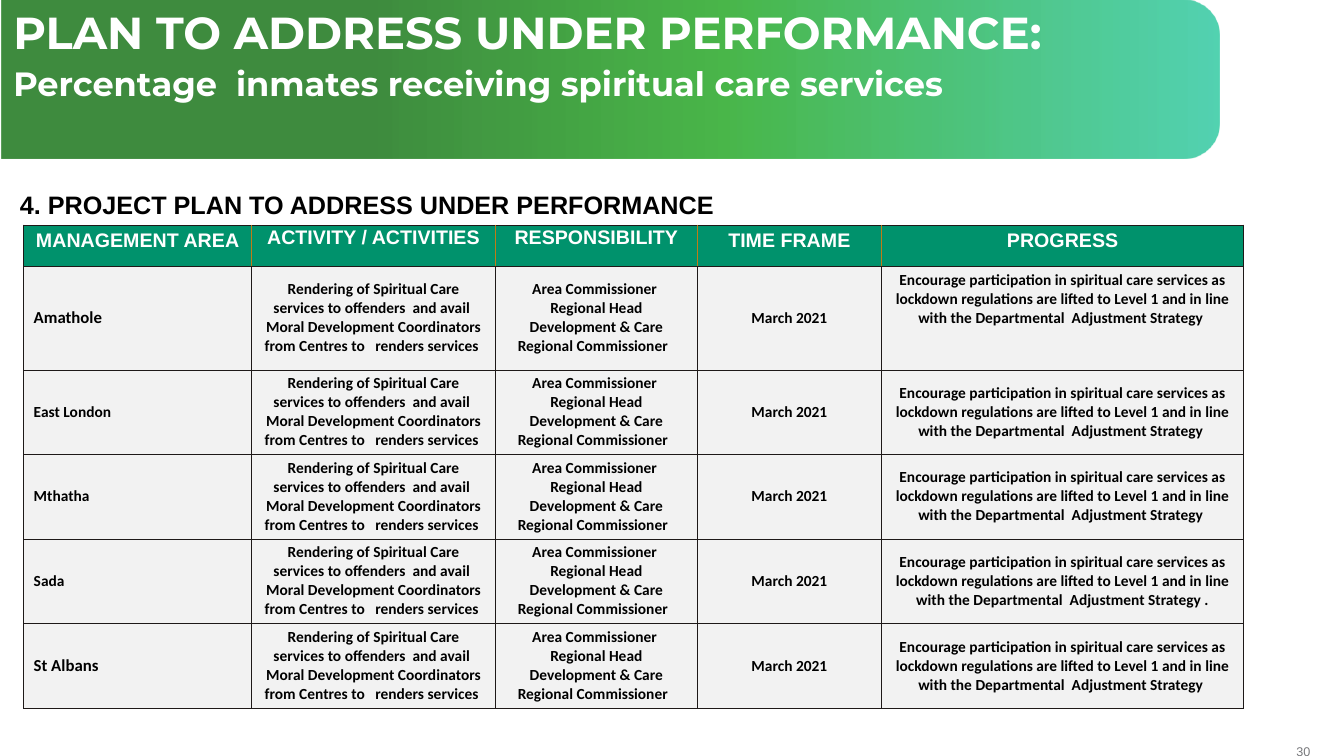
from lxml.etree import SubElement
from pptx import Presentation
from pptx.dml.color import RGBColor
from pptx.enum.shapes import MSO_SHAPE
from pptx.enum.text import MSO_ANCHOR, MSO_AUTO_SIZE, PP_ALIGN
from pptx.oxml import parse_xml
from pptx.oxml.ns import nsdecls, qn
from pptx.util import Cm, Pt

WHITE, BLACK, GREY = "FFFFFF", "000000", "77787B"
GREEN, PALE, RULE, GOLD = "00926C", "F2F2F2", "1E1918", "BF7B17"
LEFT, MID, RIGHT = PP_ALIGN.LEFT, PP_ALIGN.CENTER, PP_ALIGN.RIGHT


def color(code):
    return RGBColor.from_string(code)


class Deck:
    def __init__(self):
        self.file = Presentation()
        self.file.slide_width, self.file.slide_height = Cm(33.87), Cm(19.05)
        self.slide = self.file.slides.add_slide(self.file.slide_layouts[5])
        self.shapes = self.slide.shapes

    def fill_text(self, frame, lines, sizes, font, code, align=LEFT, bold=True):
        frame.word_wrap = True
        frame.text = "\n".join(lines)
        for para, size in zip(frame.paragraphs, sizes):
            para.alignment = align
            para.font.size, para.font.name = Pt(size), font
            para.font.bold, para.font.color.rgb = bold, color(code)

    def banner(self, left, top, width, height, stops):
        # Turned a quarter, so the rounded top edge faces right
        shape = self.shapes.add_shape(
            MSO_SHAPE.ROUND_2_SAME_RECTANGLE,
            Cm(left + (width - height) / 2), Cm(top + (height - width) / 2),
            Cm(height), Cm(width))
        shape.rotation = 90
        shape.adjustments[0], shape.adjustments[1] = 0.23, 0
        shape.shadow.inherit = False
        shape.line.fill.background()
        marks = "".join(
            f'<a:gs pos="{pos * 1000}"><a:srgbClr val="{code}">'
            f'<a:alpha val="{alpha * 1000}"/></a:srgbClr></a:gs>'
            for pos, code, alpha in stops)
        shape.fill.background()
        blank = shape._element.spPr.find(qn("a:noFill"))
        blank.getparent().replace(blank, parse_xml(
            f'<a:gradFill {nsdecls("a")} rotWithShape="1"><a:gsLst>{marks}'
            '</a:gsLst><a:lin ang="16200000" scaled="0"/></a:gradFill>'))

    def title(self, box, lines, sizes):
        title = self.shapes.title
        title.left, title.top, title.width, title.height = map(Cm, box)
        frame = title.text_frame
        self.fill_text(frame, lines, sizes, "Montserrat", WHITE)
        frame.auto_size = MSO_AUTO_SIZE.NONE
        frame.vertical_anchor = MSO_ANCHOR.TOP
        for para in frame.paragraphs:
            para.line_spacing, para.space_after = 0.9, Pt(6)
            para.space_before = Pt(0)
        self.shapes._spTree.append(title._element)  # in front of the banner

    def label(self, box, text, size, code, align=LEFT, bold=True, inset=None):
        frame = self.shapes.add_textbox(*map(Cm, box)).text_frame
        self.fill_text(frame, [text], [size], "Arial", code, align, bold)
        if inset is not None:
            frame.margin_left = frame.margin_right = Cm(inset)
            frame.margin_top = frame.margin_bottom = Cm(inset)

    def table(self, left, top, widths, heights):
        grid = self.shapes.add_table(
            len(heights), len(widths), Cm(left), Cm(top),
            Cm(sum(widths)), Cm(sum(heights))).table
        grid.first_row = grid.horz_banding = False
        for col, width in zip(grid.columns, widths):
            col.width = Cm(width)
        for row, height in zip(grid.rows, heights):
            row.height = Cm(height)
        return grid

    def cell(self, cell, lines, size, font, code, back, align, sides, pad):
        self.fill_text(cell.text_frame, lines, [size] * len(lines), font, code, align)
        cell.margin_left, cell.margin_top, cell.margin_right, cell.margin_bottom = map(Cm, pad)
        props = cell._tc.get_or_add_tcPr()
        for side, edge in zip("LRTB", sides):
            line = SubElement(props, qn(f"a:ln{side}"), w=str(Pt(0.5)))
            SubElement(SubElement(line, qn("a:solidFill")), qn("a:srgbClr"), val=edge)
        cell.fill.solid()
        cell.fill.fore_color.rgb = color(back)


def main():
    deck = Deck()

    # Banner and title
    deck.banner(0.04, 0, 30.68, 3.99,
                [(30, "006600", 75), (59, "009900", 71), (100, "00BC8D", 67)])
    deck.title((0.08, 0.15, 30.43, 1.45),
               ["PLAN TO ADDRESS UNDER PERFORMANCE:",
                "Percentage  inmates receiving spiritual care services"], [32, 24])

    # Heading and page number
    deck.label((0.25, 4.65, 24.5, 1.02),
               "4. PROJECT PLAN TO ADDRESS UNDER PERFORMANCE", 18, BLACK)
    deck.label((32.03, 18.74, 0.99, 0.38), "30", 9, GREY, RIGHT, False, 0)

    # Table content
    heads = ["MANAGEMENT AREA", "ACTIVITY / ACTIVITIES", "RESPONSIBILITY",
             "TIME FRAME", "PROGRESS"]
    areas = ["Amathole", "East London", "Mthatha", "Sada", "St Albans"]
    task = ("Rendering of Spiritual Care services to offenders  and avail  Moral "
            "Development Coordinators from Centres to   renders services ")
    staff = ["Area Commissioner ", "Regional Head Development & Care",
             "Regional Commissioner  "]
    state = ("Encourage participation in spiritual care services as lockdown "
             "regulations are lifted to Level 1 and in line with the "
             "Departmental  Adjustment Strategy ")

    grid = deck.table(0.6, 5.67, [5.74, 6.15, 5.08, 4.65, 9.12],
                      [1.04, 2.61] + [2.13] * 4)

    # Header row
    wide, tight = (0.25, 0.13, 0.25, 0.13), (0.03, 0.03, 0.03, 0)
    for col, head in enumerate(heads):
        sides = [GOLD if col else RULE, GOLD if col < 4 else RULE, RULE, RULE]
        deck.cell(grid.cell(0, col), [head], 14, "Arial", WHITE, GREEN, MID,
                  sides, tight if col in (1, 2) else wide)

    # Body rows
    for row, area in enumerate(areas, 1):
        note = state + "." if area == "Sada" else state
        for col, lines in enumerate([[area], [task], staff, ["March 2021"], [note]]):
            big = col == 0 and area in ("Amathole", "St Albans")
            cell = grid.cell(row, col)
            deck.cell(cell, lines, 12 if big else 11, "Calibri", BLACK, PALE,
                      MID if col else LEFT, [RULE] * 4, (0.25, 0.1, 0.25, 0.1))
            cell.vertical_anchor = MSO_ANCHOR.MIDDLE
    grid.cell(1, 4).vertical_anchor = MSO_ANCHOR.TOP

    deck.file.save("out.pptx")


if __name__ == "__main__":
    main()
